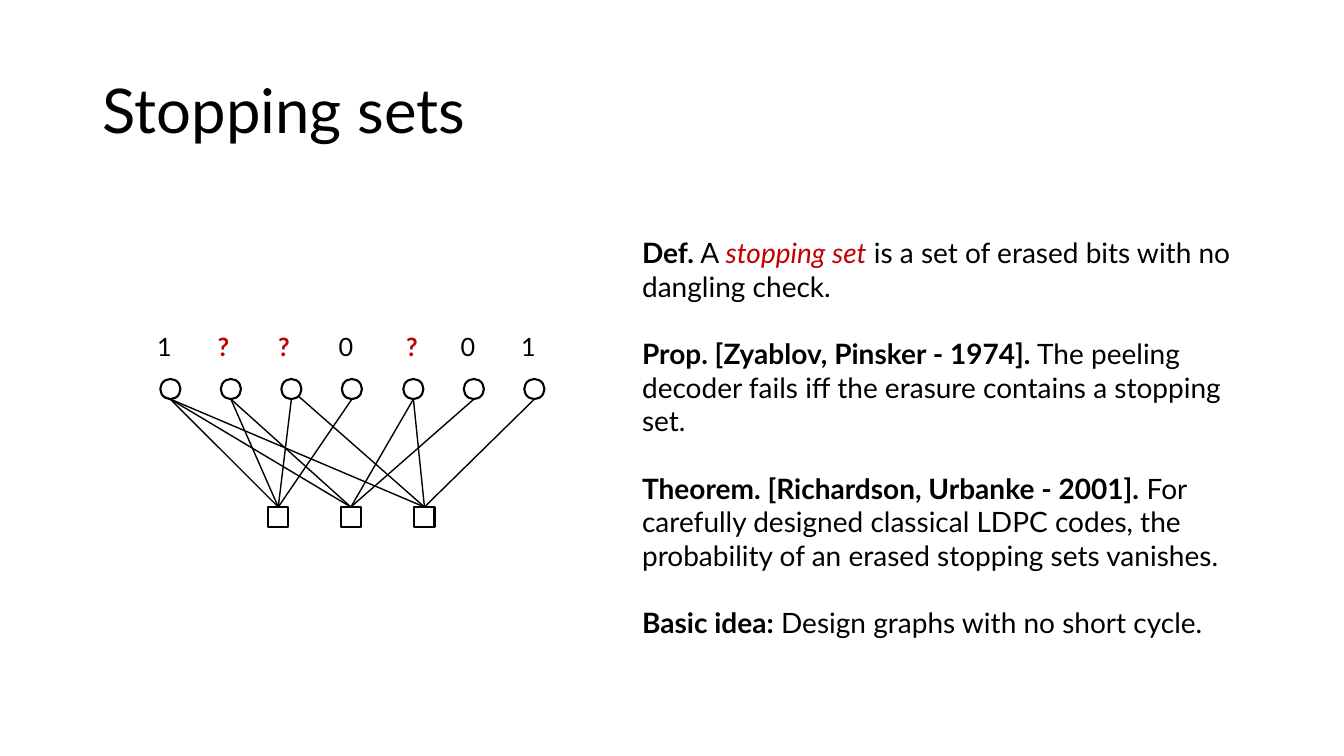
import pptx
import pptx.dml.color
import pptx.enum.shapes
import pptx.enum.text
import pptx.oxml
import pptx.oxml.ns
import pptx.util

PX = 9144  # EMU per px, 100 px to the inch
FONT = "Lato"
BLACK, WHITE, RED = "000000", "FFFFFF", "C00000"
NODE = 20  # side of a check square, diameter of a bit circle

# Symbol over each bit, with its sideways nudge
BITS = [("1", 0), ("?", 0), ("?", 0), ("0", 0), ("?", 6), ("0", 0), ("1", 0)]
# For each check: (bit, side of the circle's foot where the edge ends)
CHECK_EDGES = [
    [(0, 0), (1, 0), (2, 0), (3, 0)],
    [(0, 0), (1, 0), (4, 0), (5, 0)],
    [(0, -1), (2, 1), (4, 0), (6, 0)],
]
# Paragraphs of (text, style) spans
STATEMENTS = [
    [("Def.", "bold"), (" A ", ""), ("stopping set", "term"),
     (" is a set of erased bits with no dangling check.", "")],
    [("Prop. [Zyablov, Pinsker - 1974].", "bold"),
     (" The peeling decoder fails iff the erasure contains a stopping set.", "")],
    [("Theorem. [Richardson, Urbanke - 2001].", "bold"),
     (" For carefully designed classical LDPC codes, the probability of an "
      "erased stopping sets vanishes.", "")],
    [("Basic idea:", "bold"), (" Design graphs with no short cycle.", "")],
]


def px(length):
    return pptx.util.Emu(length * PX)


def color(value):
    return pptx.dml.color.RGBColor.from_string(value)


def add_box(page, left, top, width, height, wrap=True):
    box = page.shapes.add_textbox(px(left), px(top), px(width), px(height))
    box.text_frame.word_wrap = wrap
    return box.text_frame


def add_span(para, text, size, ink=BLACK, bold=False, italic=False):
    span = para.add_run()
    span.text = text
    span.font.name = FONT
    span.font.size = pptx.util.Pt(size)
    span.font.bold = bold
    span.font.italic = italic
    span.font.color.rgb = color(ink)


def add_node(page, kind, left, top):
    node = page.shapes.add_shape(kind, px(left), px(top), px(NODE), px(NODE))
    node.shadow.inherit = False
    node.fill.solid()
    node.fill.fore_color.rgb = color(WHITE)
    node.line.color.rgb = color(BLACK)
    node.line.width = pptx.util.Pt(1.5)
    return node


def add_edge(page, check, end_x, end_y):
    edge = page.shapes.add_connector(
        pptx.enum.shapes.MSO_CONNECTOR.STRAIGHT,
        check.left, check.top, px(end_x), px(end_y))
    edge.begin_connect(check, 0)
    edge.line.color.rgb = color(BLACK)
    edge.line.width = pptx.util.Pt(1)
    properties = edge._element.spPr
    properties.append(pptx.oxml.parse_xml(
        "<a:effectLst %s/>" % pptx.oxml.ns.nsdecls("a")))


def add_title(page, left, top, width, height):
    frame = add_box(page, left, top, width, height)
    frame.vertical_anchor = pptx.enum.text.MSO_ANCHOR.MIDDLE
    para = frame.paragraphs[0]
    para.line_spacing = 0.9
    add_span(para, "Stopping sets", 44)


def add_graph(page, left, top, width, height):
    """Bits in a row on top, checks in a row at the bottom, edges between."""
    shapes = pptx.enum.shapes.MSO_SHAPE
    label_width, label_height = 33, 40
    bit_pitch = (width - label_width) / (len(BITS) - 1)
    bit_top = top + 52
    check_left, check_pitch = left + 120, 72.5

    # Symbols and bit circles
    bit_lefts = []
    for index, (symbol, nudge) in enumerate(BITS):
        label_left = round(left + index * bit_pitch)
        erased = symbol == "?"
        frame = add_box(page, label_left + nudge, top,
                        label_width, label_height, wrap=False)
        add_span(frame.paragraphs[0], symbol, 18,
                 RED if erased else BLACK, bold=erased)
        bit_lefts.append(label_left + 13)
        add_node(page, shapes.OVAL, bit_lefts[-1], bit_top)

    # Check squares with their edges
    for index, edges in enumerate(CHECK_EDGES):
        check = add_node(page, shapes.RECTANGLE,
                         round(check_left + index * check_pitch),
                         top + height - NODE)
        for bit, side in edges:
            add_edge(page, check, bit_lefts[bit] + NODE // 2 + 7 * side,
                     bit_top + NODE - 3 * abs(side))


def add_statements(page, left, top, width, height):
    frame = add_box(page, left, top, width, height)
    styles = {"": {}, "bold": {"bold": True},
              "term": {"ink": RED, "italic": True}}
    for index, spans in enumerate(STATEMENTS):
        para = frame.add_paragraph() if index else frame.paragraphs[0]
        para.space_before = pptx.util.Pt(24 if index else 0)
        for text, style in spans:
            add_span(para, text, 20, **styles[style])


def main():
    deck = pptx.Presentation()
    deck.slide_width, deck.slide_height = px(1333), px(750)
    page = deck.slides.add_slide(deck.slide_layouts[6])
    add_title(page, 92, 40, 1150, 145)
    add_graph(page, 146, 324, 394, 199)
    add_statements(page, 627, 229, 627, 414)
    deck.save("out.pptx")


if __name__ == "__main__":
    main()
